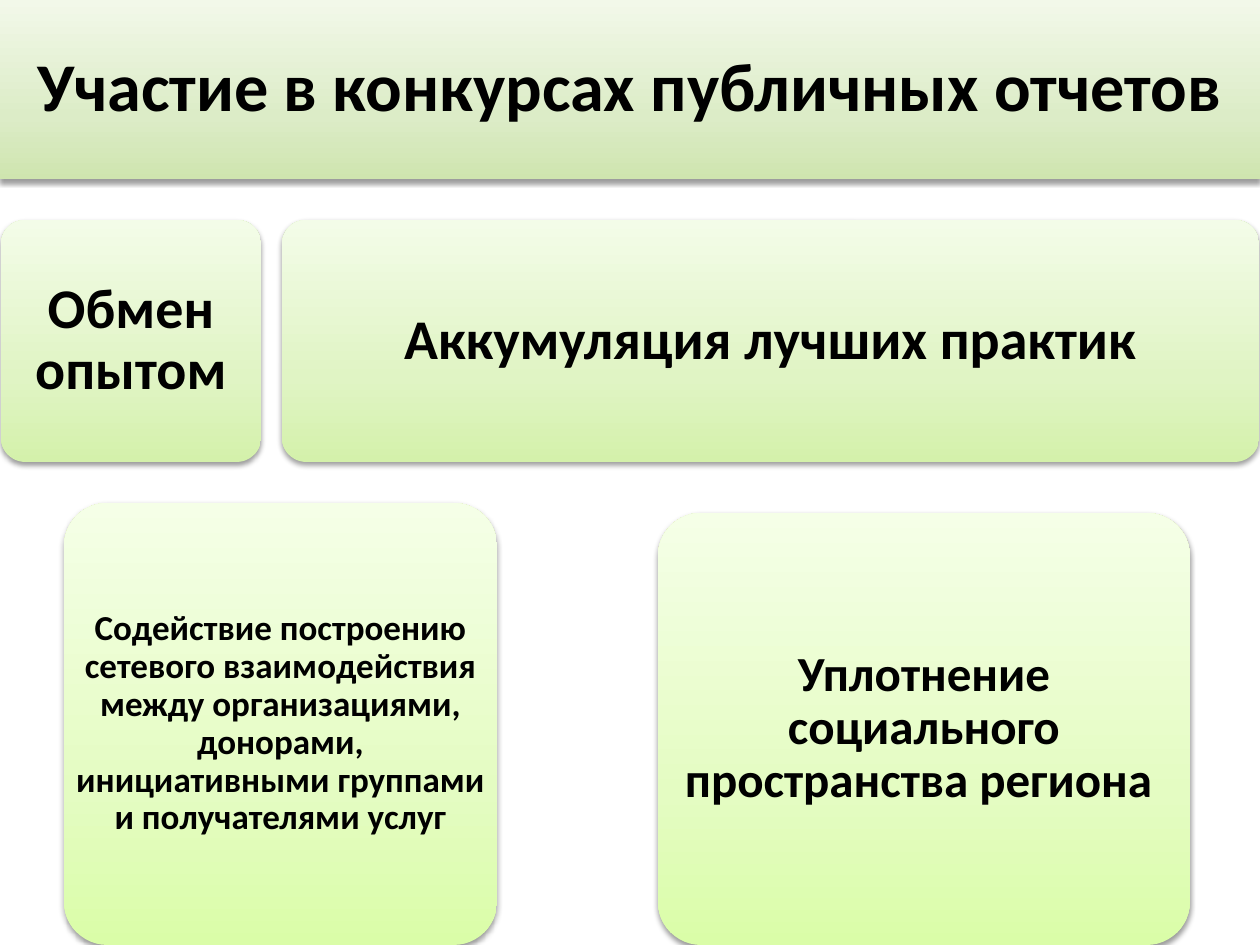
from typing import NamedTuple

from lxml.etree import SubElement
from pptx import Presentation
from pptx.dml.color import RGBColor
from pptx.enum.shapes import MSO_SHAPE
from pptx.enum.text import MSO_ANCHOR, MSO_AUTO_SIZE, PP_ALIGN
from pptx.oxml import parse_xml
from pptx.oxml.ns import nsdecls, qn
from pptx.util import Pt

EMU_PER_PX = 914400 / 126
CORNER = 0.1
CORNER_TEXT_INSET = 0.29 * CORNER
FONT = "Calibri"
COLORS = {
    "text": "000000",
    "shadow": "000000",
    "header": ("CFE5AF", "DCECC7", "F2F8E9"),
    "middle": ("D4F1AB", "E0F4C4", "F3FCE8"),
    "bottom": ("DAFDA8", "E4FCC2", "F5FFE7"),
}
STOPS = (0, 35, 100)


class Card(NamedTuple):
    text: str
    left: int
    top: int
    width: int
    height: int
    level: str
    size: int
    inset: int


HEADER = Card("Участие в конкурсах публичных отчетов",
              0, 0, 1260, 179, "header", 39, 20)
BENEFITS = (
    Card("Обмен опытом", 1, 220, 260, 242, "middle", 32, 16),
    Card("Аккумуляция лучших практик", 282, 220, 977, 242, "middle", 32, 16),
    Card("Содействие построению сетевого взаимодействия между организациями, "
         "донорами, инициативными группами и получателями услуг",
         64, 503, 433, 442, "bottom", 20, 10),
    Card("Уплотнение социального пространства региона ",
         658, 513, 532, 432, "bottom", 28, 15),
)


def px(value: float) -> int:
    return round(value * EMU_PER_PX)


def place(shape, card: Card) -> None:
    shape.left, shape.top = px(card.left), px(card.top)
    shape.width, shape.height = px(card.width), px(card.height)


def round_corners(placeholder) -> None:
    geometry = parse_xml(
        f'<a:prstGeom {nsdecls("a")} prst="roundRect"><a:avLst>'
        f'<a:gd name="adj" fmla="val {round(CORNER * 100000)}"/>'
        '</a:avLst></a:prstGeom>')
    placeholder._element.spPr.find(qn("a:xfrm")).addnext(geometry)


def paint(shape, level: str) -> None:
    stops = "".join(
        f'<a:gs pos="{stop * 1000}"><a:srgbClr val="{color}"/></a:gs>'
        for stop, color in zip(STOPS, COLORS[level]))
    gradient = parse_xml(
        f'<a:gradFill {nsdecls("a")} rotWithShape="1"><a:gsLst>{stops}</a:gsLst>'
        '<a:lin ang="16200000" scaled="0"/></a:gradFill>')
    shape.line.fill.background()
    properties = shape._element.spPr
    properties.find(qn("a:prstGeom")).addnext(gradient)

    shape.shadow.inherit = False
    shadow = SubElement(
        properties.find(qn("a:effectLst")), qn("a:outerShdw"),
        blurRad=str(Pt(3.1)), dist=str(Pt(1.6)), dir="5400000", rotWithShape="0")
    color = SubElement(shadow, qn("a:srgbClr"), val=COLORS["shadow"])
    SubElement(color, qn("a:alpha"), val="38000")


def write(shape, card: Card) -> None:
    frame = shape.text_frame
    frame.text = card.text
    frame.word_wrap = True
    frame.auto_size = MSO_AUTO_SIZE.NONE
    frame.vertical_anchor = MSO_ANCHOR.MIDDLE
    margin = px(card.inset - CORNER_TEXT_INSET * min(card.width, card.height))
    frame.margin_left = frame.margin_right = margin
    frame.margin_top = frame.margin_bottom = margin
    paragraph = frame.paragraphs[0]
    paragraph.alignment = PP_ALIGN.CENTER
    paragraph.line_spacing = 0.9
    font = paragraph.runs[0].font
    font.name = FONT
    font.size = Pt(card.size)
    font.bold = True
    font.color.rgb = RGBColor.from_string(COLORS["text"])


def draw_header(slide, card: Card) -> None:
    title = slide.shapes.title
    place(title, card)
    round_corners(title)
    paint(title, card.level)
    write(title, card)


def draw_benefit(slide, card: Card) -> None:
    benefit = slide.shapes.add_shape(
        MSO_SHAPE.ROUNDED_RECTANGLE, px(card.left), px(card.top),
        px(card.width), px(card.height))
    benefit.adjustments[0] = CORNER
    paint(benefit, card.level)
    write(benefit, card)


def main() -> None:
    deck = Presentation()
    deck.slide_width, deck.slide_height = px(1260), px(945)
    slide = deck.slides.add_slide(deck.slide_layouts[5])
    draw_header(slide, HEADER)
    for card in BENEFITS:
        draw_benefit(slide, card)
    deck.save("out.pptx")


if __name__ == "__main__":
    main()
